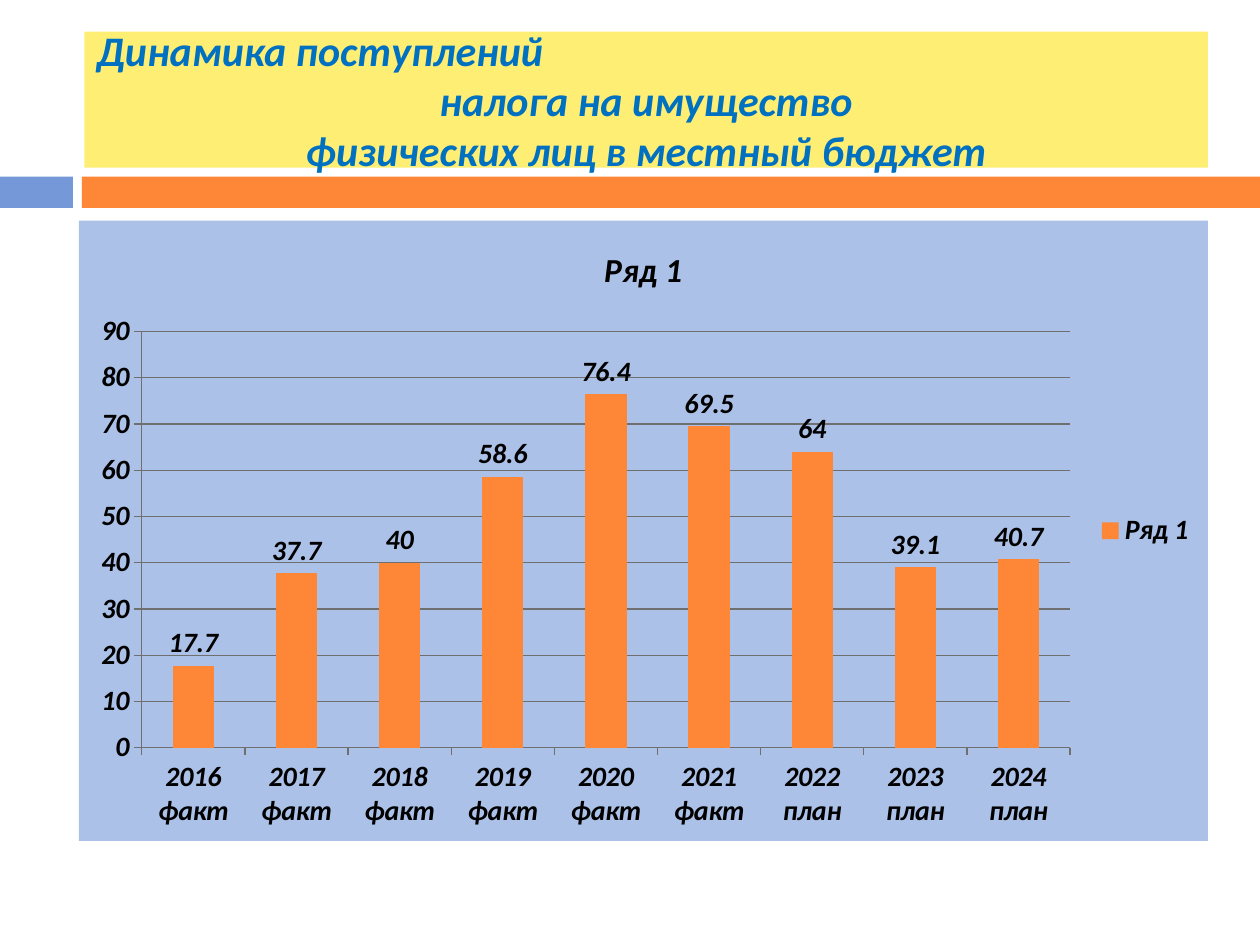
from dataclasses import dataclass

from lxml import etree
from pptx import Presentation
from pptx.chart.data import CategoryChartData
from pptx.dml.color import RGBColor
from pptx.enum import chart as charts, shapes, text
from pptx.oxml import parse_xml
from pptx.oxml.ns import nsdecls, qn
from pptx.util import Cm, Pt


@dataclass(frozen=True)
class Theme:
    font: str = "Calibri"
    blue: str = "7598D9"
    orange: str = "FE8637"
    yellow: str = "FFEE74"
    pale_blue: str = "ACC1E8"
    title_text: str = "0070C0"
    chart_text: str = "000000"
    grid: str = "6F6F6F"
    title_size: float = 24
    chart_title_size: float = 19.2
    chart_size: float = 16


THEME = Theme()
TITLE_LINES = ("Динамика поступлений", "налога на имущество", "физических лиц в местный бюджет")
SERIES_NAME = "Ряд 1"
FIRST_YEAR, FIRST_PLAN_YEAR = 2016, 2022
REVENUE = (17.7, 37.7, 40, 58.6, 76.4, 69.5, 64, 39.1, 40.7)


def style_font(font, size, color):
    font.name, font.size = THEME.font, Pt(size)
    font.bold = font.italic = True
    font.color.rgb = RGBColor.from_string(color)


def add_panel(page, box, color):
    panel = page.shapes.add_shape(shapes.MSO_SHAPE.RECTANGLE, *map(Cm, box))
    panel.shadow.inherit = False
    panel.fill.solid()
    panel.fill.fore_color.rgb = RGBColor.from_string(color)
    panel.line.fill.background()
    return panel


def add_band(page, box):
    """Blue stub and orange bar, parted by a small gap."""
    left, top, width, height = box
    stub, gap = 1.47, 0.18
    add_panel(page, (left, top, stub, height), THEME.blue)
    add_panel(page, (left + stub + gap, top, width - stub - gap, height), THEME.orange)


def add_title(page, box):
    frame = add_panel(page, box, THEME.yellow).text_frame
    frame.word_wrap = True
    frame.vertical_anchor = text.MSO_ANCHOR.MIDDLE
    frame.text = "\n".join(TITLE_LINES)
    for index, para in enumerate(frame.paragraphs):
        para.alignment = text.PP_ALIGN.CENTER if index else text.PP_ALIGN.LEFT
        for span in para.runs:
            style_font(span.font, THEME.title_size, THEME.title_text)


def fill_chart_area(chart, color):
    area = parse_xml(
        f'<c:spPr {nsdecls("c", "a")}><a:solidFill><a:srgbClr val="{color}"/></a:solidFill>'
        "<a:ln><a:noFill/></a:ln></c:spPr>"
    )
    chart.element.find(qn("c:chart")).addnext(area)


def style_line(line):
    line.width = Pt(0.75)
    line.color.rgb = RGBColor.from_string(THEME.grid)


def add_revenue_chart(page, box):
    data = CategoryChartData()
    years = range(FIRST_YEAR, FIRST_YEAR + len(REVENUE))
    data.categories = [f"{year} {'факт' if year < FIRST_PLAN_YEAR else 'план'}" for year in years]
    data.add_series(SERIES_NAME, REVENUE)
    kind = charts.XL_CHART_TYPE.COLUMN_CLUSTERED
    chart = page.shapes.add_chart(kind, *map(Cm, box), data).chart
    style_font(chart.font, THEME.chart_size, THEME.chart_text)
    fill_chart_area(chart, THEME.pale_blue)

    # Title and legend
    chart.has_title = True
    chart.chart_title.text_frame.text = SERIES_NAME
    span = chart.chart_title.text_frame.paragraphs[0].runs[0]
    style_font(span.font, THEME.chart_title_size, THEME.chart_text)
    chart.has_legend = True
    chart.legend.position = charts.XL_LEGEND_POSITION.RIGHT
    chart.legend.include_in_layout = False

    # Axes
    for axis in (chart.category_axis, chart.value_axis):
        axis.major_tick_mark = charts.XL_TICK_MARK.OUTSIDE
        style_line(axis.format.line)
    scale = chart.value_axis
    scale.minimum_scale, scale.maximum_scale, scale.major_unit = 0, 90, 10
    style_line(scale.major_gridlines.format.line)

    # Columns and their values
    plot = chart.plots[0]
    plot.gap_width = 150
    plot.vary_by_categories = False
    fill = plot.series[0].format.fill
    fill.solid()
    fill.fore_color.rgb = RGBColor.from_string(THEME.orange)
    plot.has_data_labels = True
    plot.data_labels.show_value = True
    plot.data_labels.position = charts.XL_LABEL_POSITION.OUTSIDE_END


def main():
    deck = Presentation()
    deck.slide_width, deck.slide_height = Cm(25.4), Cm(19.05)
    page = deck.slides.add_slide(deck.slide_layouts[6])
    add_band(page, (0, 3.56, 25.4, 0.63))
    add_title(page, (1.7, 0.64, 22.65, 2.74))
    add_revenue_chart(page, (1.59, 4.45, 22.76, 12.5))
    deck.save("out.pptx")


if __name__ == "__main__":
    main()
